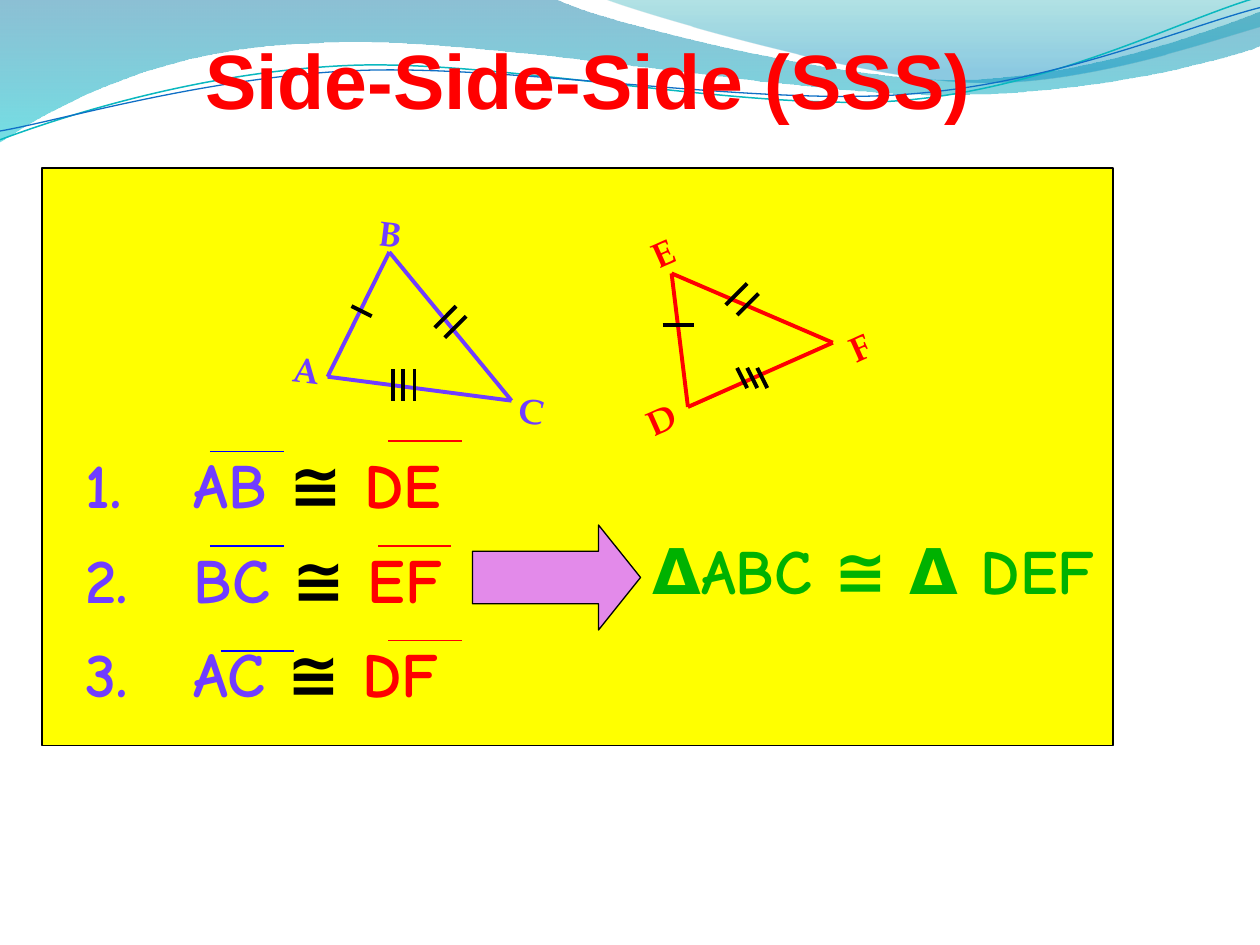
from itertools import combinations
from math import cos, radians, sin

from lxml import etree
from pptx import Presentation
from pptx import util as u
from pptx.dml.color import RGBColor
from pptx.enum import shapes, text
from pptx.oxml import parse_xml
from pptx.oxml.ns import nsdecls, qn

RED = RGBColor(0xFF, 0x00, 0x00)
PURPLE = RGBColor(0x70, 0x3D, 0xFF)
GREEN = RGBColor(0x00, 0xB2, 0x00)
BLUE = RGBColor(0x00, 0x00, 0xFF)
BLACK = RGBColor(0x00, 0x00, 0x00)
YELLOW = RGBColor(0xFF, 0xFF, 0x00)
PINK = RGBColor(0xE3, 0x8A, 0xEA)
TEAL = RGBColor(0x0A, 0xB8, 0xBF)
WAVE_BLUE = RGBColor(0x0F, 0x6F, 0xC6)


def grid(*cells):
    """Twelfths of an inch, the grid of the panel and its parts."""
    return [c / 12 for c in cells]


def add_run(p, words, font="Comic Neue", size=36, color=BLACK):
    r = p.add_run()
    r.text = words
    r.font.name, r.font.size, r.font.bold = font, u.Pt(size), True
    r.font.color.rgb = color


def space_before(p, percent):
    spc = etree.SubElement(p._p.get_or_add_pPr(), qn("a:spcBef"))
    etree.SubElement(spc, qn("a:spcPct")).set("val", str(percent * 1000))


def number(p, indent):
    pPr = p._p.get_or_add_pPr()
    pPr.set("marL", str(u.Inches(indent)))
    pPr.set("indent", str(-u.Inches(indent)))
    etree.SubElement(pPr, qn("a:buFont")).set("typeface", "Comic Neue")
    etree.SubElement(pPr, qn("a:buAutoNum")).set("type", "arabicPeriod")


class Board:
    def __init__(self, slide):
        self.s = slide
        self.thin, self.thick = 0.75, 2.25

    def title(self, words, *box):
        sp = self.s.shapes.title
        sp.left, sp.top, sp.width, sp.height = map(u.Inches, box)
        tf = sp.text_frame
        tf.vertical_anchor = text.MSO_ANCHOR.MIDDLE
        tf.paragraphs[0].alignment = text.PP_ALIGN.CENTER
        add_run(tf.paragraphs[0], words, font="Arial", size=44, color=RED)
        sp.element.getparent().append(sp.element)  # in front of the waves

    def wave(self, box, start, parts, stops=None, color=None, width=0.75, rotation=0):
        """Outline of lines (2 numbers) and cubic curves (6 numbers)."""
        left, top, w, h = box
        fb = self.s.shapes.build_freeform(u.Inches(left), u.Inches(top), scale=1.0)
        fb.add_line_segments([(u.Inches(left + w), u.Inches(top + h))], close=False)
        sp = fb.convert_to_shape()
        sp.shadow.inherit = False
        sp.rotation = rotation
        outline = sp._element.spPr.find(".//" + qn("a:path"))
        for child in list(outline):
            outline.remove(child)
        c, s = cos(radians(-rotation)), sin(radians(-rotation))

        def add(tag, numbers):
            seg = etree.SubElement(outline, qn(tag))
            for x, y in zip(numbers[::2], numbers[1::2]):
                dx, dy = x - left - w / 2, y - top - h / 2
                pt = etree.SubElement(seg, qn("a:pt"))
                pt.set("x", str(u.Inches(dx * c - dy * s + w / 2)))
                pt.set("y", str(u.Inches(dx * s + dy * c + h / 2)))

        add("a:moveTo", start)
        for part in parts:
            add("a:lnTo" if len(part) == 2 else "a:cubicBezTo", part)
        if stops:
            etree.SubElement(outline, qn("a:close"))
            sp.line.fill.background()
            gs = "".join(
                f'<a:gs pos="{pos * 1000}"><a:srgbClr val="{rgb}">'
                f'<a:alpha val="{alpha * 1000}"/></a:srgbClr></a:gs>'
                for pos, rgb, alpha in stops)
            sp._element.spPr.find(qn("a:custGeom")).addnext(parse_xml(
                f'<a:gradFill {nsdecls("a")} rotWithShape="1"><a:gsLst>{gs}'
                '</a:gsLst><a:lin ang="5400000" scaled="0"/></a:gradFill>'))
        else:
            sp.fill.background()
            sp.line.color.rgb, sp.line.width = color, u.Pt(width)

    def shape(self, kind, fill, *box):
        sp = self.s.shapes.add_shape(kind, *map(u.Inches, box))
        sp.shadow.inherit = False
        sp.fill.solid()
        sp.fill.fore_color.rgb = fill
        sp.line.color.rgb, sp.line.width = BLACK, u.Pt(self.thin)
        return sp

    def textbox(self, *box, rotation=0, label=False):
        sp = self.s.shapes.add_textbox(*map(u.Inches, box))
        sp.rotation = rotation
        tf = sp.text_frame
        tf.word_wrap = not label
        tf.auto_size = text.MSO_AUTO_SIZE.SHAPE_TO_FIT_TEXT
        if label:
            tf.margin_left = tf.margin_top = tf.margin_right = tf.margin_bottom = 0
        return tf

    def line(self, start, end, color, width):
        ln = self.s.shapes.add_connector(
            shapes.MSO_CONNECTOR.STRAIGHT, *map(u.Inches, (*start, *end)))
        ln.line.color.rgb, ln.line.width = color, u.Pt(width)
        etree.SubElement(ln._element.spPr, qn("a:effectLst"))

    def triangle(self, corners, labels, color, rotation):
        for start, end in combinations(corners, 2):
            self.line(start, end, color, self.thick)
        for name, x, y in labels:
            tf = self.textbox(x, y, 0.2, 0.33, rotation=rotation, label=True)
            add_run(tf.paragraphs[0], name, "TeX Gyre Pagella", 20, color)

    def ticks(self, starts, dx, dy):
        for x, y in starts:
            self.line((x, y), (x + dx, y + dy), BLACK, self.thick)


def main():
    prs = Presentation()
    prs.slide_width, prs.slide_height = u.Inches(10), u.Inches(7.5)
    board = Board(prs.slides.add_slide(prs.slide_layouts[5]))

    # Waves along the top
    board.wave((-0.01, -0.01, 10.02, 1.14), (0, 0), [
        (4.4, -0.01), (4.76, 0.17, 6.64, 0.63, 7.58, 0.63),
        (8.53, 0.63, 9.58, 0.26, 10, 0.09), (10.01, 0.36),
        (9.83, 0.44, 8.7, 0.76, 7.46, 0.75), (6.22, 0.75, 3.82, 0.28, 2.57, 0.34),
        (1.29, 0.36, 0.46, 0.83, -0.01, 1.13), (0, 0)],
        stops=[(0, "0074A1", 45), (100, "00C6CF", 55)])
    board.wave((4.79, -0.01, 5.21, 0.7), (4.79, -0.01), [
        (5.09, 0.11, 6.82, 0.62, 7.69, 0.65),
        (8.56, 0.69, 9.61, 0.32, 10, 0.21), (10, 0), (4.79, -0.01)],
        stops=[(0, "00A1A9", 30), (80, "008BBF", 45)])
    board.wave((-0.02, 0.22, 10.02, 0.71), (0, 1.11), [
        (0.48, 0.93, 1.58, 0.57, 2.77, 0.52), (3.95, 0.47, 5.93, 0.89, 7.13, 0.8),
        (8.33, 0.71, 9.38, 0.15, 9.98, -0.02)],
        color=TEAL, width=0.85, rotation=357.3)
    board.wave((-0.02, 0.3, 10.03, 0.58), (0, 1.04), [
        (0.47, 0.96, 1.64, 0.61, 2.83, 0.56), (4.03, 0.51, 5.97, 0.84, 7.17, 0.75),
        (8.36, 0.67, 9.41, 0.21, 10, 0.06)], color=WAVE_BLUE, rotation=357.3)

    # Title and panel
    board.title("Side-Side-Side (SSS)", -0.33, 0, 10, 1.25)
    board.shape(shapes.MSO_SHAPE.RECTANGLE, YELLOW, *grid(4, 16, 102, 55))

    # Congruent sides
    tf = board.textbox(0.58, 3.49, 3.5, 2.26)
    for i, (left, right) in enumerate([("AB", "DE"), ("BC", "EF"), ("AC", "DF")]):
        p = tf.add_paragraph() if i else tf.paragraphs[0]
        space_before(p, 30)
        number(p, 0.86)
        add_run(p, left + " ", color=PURPLE)
        add_run(p, "≅ ")
        add_run(p, right, color=RED)

    # Conclusion
    arrow = board.shape(shapes.MSO_SHAPE.RIGHT_ARROW, PINK, *grid(45, 50, 16, 10))
    arrow.adjustments[0], arrow.adjustments[1] = 0.5, 0.4
    p = board.textbox(5.08, 4.17, 3.75, 0.7).paragraphs[0]
    space_before(p, 50)
    add_run(p, "ΔABC ≅ Δ DEF", color=GREEN)

    # Triangle ABC with its tick marks
    board.triangle([(2.6, 2.99), (3.09, 2), (4.06, 3.18)],
                   [("B", 3.01, 1.68), ("A", 2.33, 2.76), ("C", 4.12, 3.09)],
                   PURPLE, 7)
    board.ticks([(2.79, 2.43)], 0.16, 0.08)
    board.ticks([(3.62, 2.43), (3.7, 2.51)], -0.17, 0.17)
    board.ticks([(x, 2.93) for x in (3.12, 3.2, 3.29)], 0, 0.25)

    # Triangle DEF with its tick marks
    board.triangle([(5.46, 3.23), (5.33, 2.17), (6.61, 2.72)],
                   [("E", 5.17, 1.83), ("D", 5.13, 3.16), ("F", 6.74, 2.58)],
                   RED, 336)
    board.ticks([(5.26, 2.58)], 0.25, 0)
    board.ticks([(5.76, 2.42), (5.85, 2.5)], 0.17, -0.17)
    board.ticks([(x, 2.92) for x in (5.85, 5.93, 6.01)], 0.08, 0.16)

    # Bars over the segment names
    for color, starts in [(RED, [(37, 42), (36, 52), (37, 61)]),
                          (BLUE, [(20, 43), (20, 52), (21, 62)])]:
        for x, y in starts:
            board.line(grid(x, y), grid(x + 7, y), color, board.thin)

    prs.save("out.pptx")


if __name__ == "__main__":
    main()
